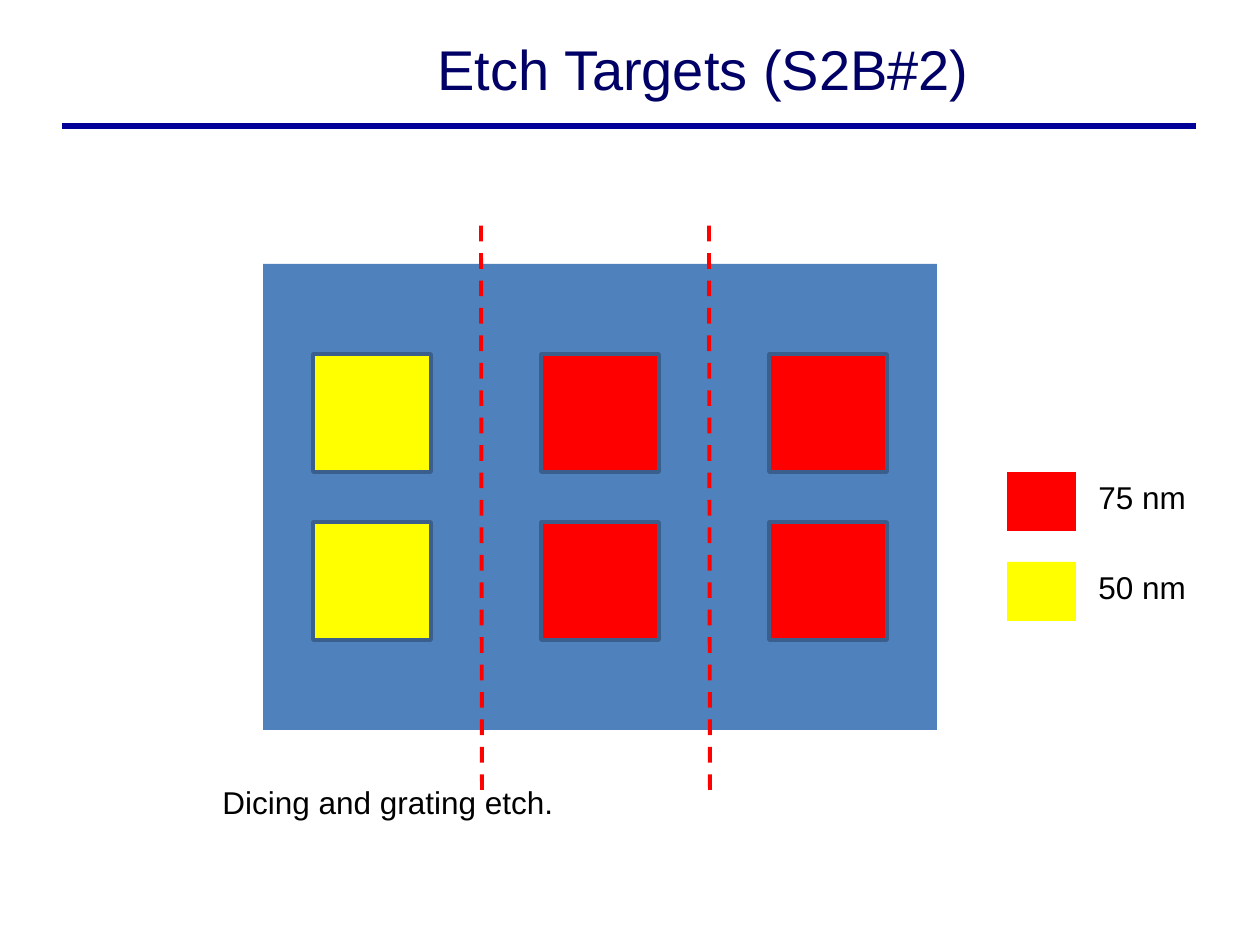
from pptx import Presentation
from pptx.dml.color import RGBColor
from pptx.enum.dml import MSO_LINE_DASH_STYLE as Dash
from pptx.enum.shapes import MSO_CONNECTOR as Conn, MSO_SHAPE as Shape
from pptx.enum.text import MSO_ANCHOR as Anchor, MSO_AUTO_SIZE as Fit, PP_ALIGN as Align
from pptx.oxml.ns import qn
from pptx.util import Pt
from lxml import etree

SCALE = 914400 / 126  # EMU in one px
FONT = "Arial"
BLACK = RGBColor(0x00, 0x00, 0x00)
NAVY = RGBColor(0x00, 0x00, 0x66)
RULE = RGBColor(0x00, 0x00, 0x99)
WAFER = RGBColor(0x4F, 0x81, 0xBD)
EDGE = RGBColor(0x3A, 0x5F, 0x8C)
RED = RGBColor(0xFF, 0x00, 0x00)
YELLOW = RGBColor(0xFF, 0xFF, 0x00)


def px(*vals):
    return [round(v * SCALE) for v in vals]


def set_font(para, size, color):
    para.font.name = FONT
    para.font.size = Pt(size)
    para.font.color.rgb = color


def add_title(slide, text):
    title = slide.shapes.title
    title.left, title.top, title.width, title.height = px(210, 10, 987, 116)
    frame = title.text_frame
    frame.text = text
    frame.vertical_anchor = Anchor.MIDDLE
    para = frame.paragraphs[0]
    para.alignment = Align.CENTER
    set_font(para, 32, NAVY)


def add_box(slide, x, y, w, h, fill, edge=None):
    box = slide.shapes.add_shape(Shape.RECTANGLE, *px(x, y, w, h))
    box.shadow.inherit = False
    box.fill.solid()
    box.fill.fore_color.rgb = fill
    if edge is None:
        box.line.fill.background()
    else:
        box.line.color.rgb = edge
        box.line.width = Pt(2)


def add_line(slide, ends, color, width, dash=None):
    line = slide.shapes.add_connector(Conn.STRAIGHT, *px(*ends))
    line.line.color.rgb = color
    line.line.width = Pt(width)
    if dash is not None:
        line.line.dash_style = dash
    etree.SubElement(line._element.spPr, qn("a:effectLst"))


def add_text(slide, x, y, w, h, text, wrap=True):
    frame = slide.shapes.add_textbox(*px(x, y, w, h)).text_frame
    frame.word_wrap = wrap
    frame.auto_size = Fit.SHAPE_TO_FIT_TEXT
    frame.text = text
    set_font(frame.paragraphs[0], 18, BLACK)


def main():
    prs = Presentation()
    prs.slide_width, prs.slide_height = px(1260, 945)
    slide = prs.slides.add_slide(prs.slide_layouts[5])

    # Heading
    add_line(slide, (62, 126, 1196, 126), RULE, 3)
    add_title(slide, "Etch Targets (S2B#2)")

    # Wafer with a grid of targets, one fill per column
    add_box(slide, 263, 264, 674, 466, WAFER)
    for col, fill in enumerate((YELLOW, RED, RED)):
        for row in range(2):
            add_box(slide, 313 + 228 * col, 354 + 168 * row, 118, 118, fill, EDGE)

    add_text(slide, 210, 777, 777, 50, "Dicing and grating etch.")

    # Dicing cuts between the columns
    for x in (482, 710):
        add_line(slide, (x, 790, x - 1, 225), RED, 2.25, Dash.DASH)

    # Legend
    for i, (fill, label) in enumerate(((RED, "75 nm"), (YELLOW, "50 nm"))):
        y = 472 + 90 * i
        add_box(slide, 1007, y, 69, 59, fill)
        add_text(slide, 1086, y, 113, 50, label, wrap=False)

    prs.save("out.pptx")


if __name__ == "__main__":
    main()
